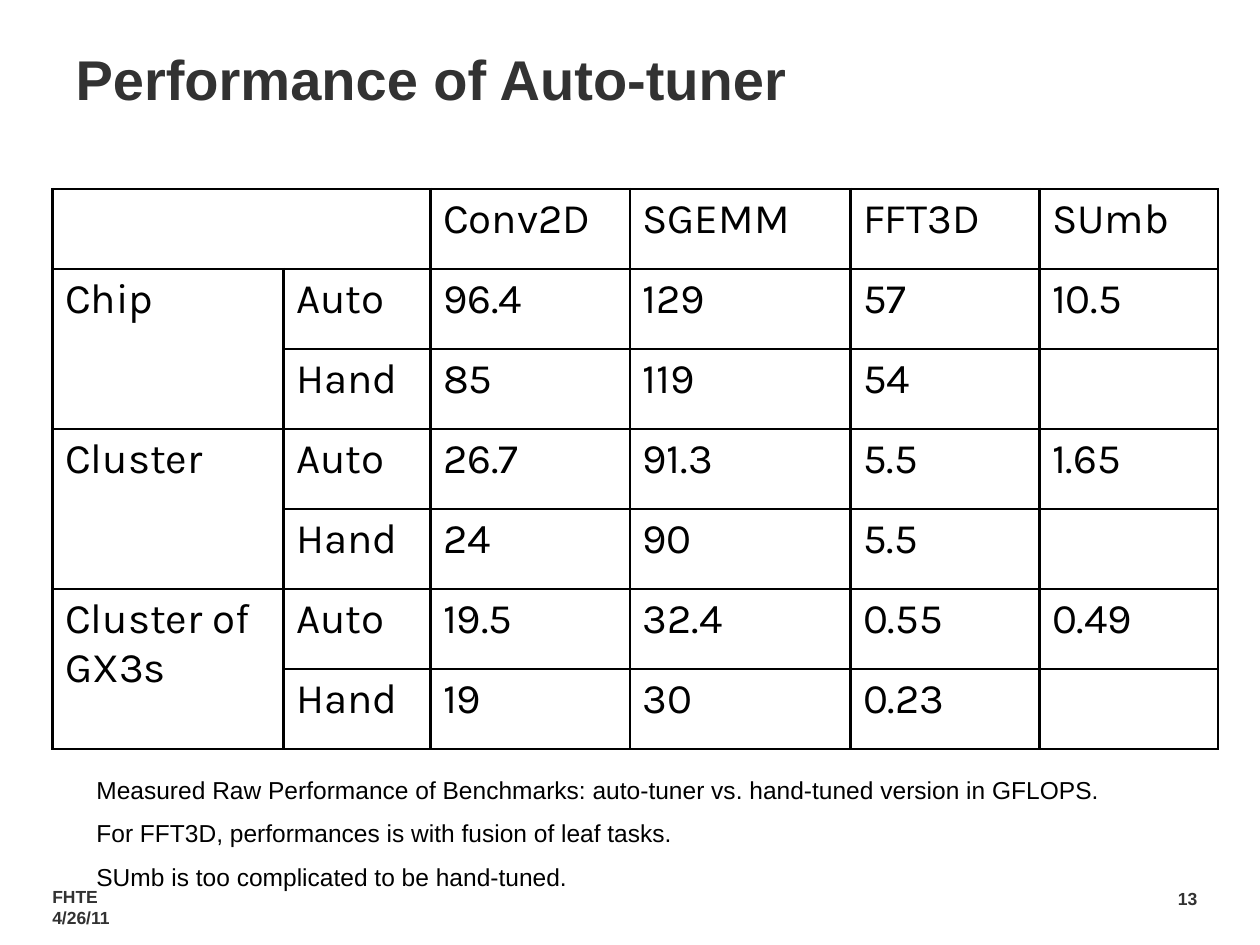
from lxml.etree import SubElement
from pptx import Presentation
from pptx.dml.color import RGBColor
from pptx.enum.text import MSO_ANCHOR as Anchor, MSO_AUTO_SIZE as AutoSize, PP_ALIGN as Align
from pptx.oxml.ns import qn
from pptx.util import Inches, Pt

BLACK = RGBColor(0x00, 0x00, 0x00)
CHARCOAL = RGBColor(0x32, 0x32, 0x32)

COLUMN_WIDTHS = [22, 14, 19, 21, 18, 17]
ROW_HEIGHT = 7.62
HEADINGS = ["Conv2D", "SGEMM", "FFT3D", "SUmb"]
RESULTS = {
    "Chip": (["96.4", "129", "57", "10.5"], ["85", "119", "54", ""]),
    "Cluster": (["26.7", "91.3", "5.5", "1.65"], ["24", "90", "5.5", ""]),
    "Cluster of GX3s": (["19.5", "32.4", "0.55", "0.49"], ["19", "30", "0.23", ""]),
}
NOTES = [
    "Measured Raw Performance of Benchmarks: auto-tuner vs. hand-tuned version in GFLOPS.",
    "For FFT3D, performances is with fusion of leaf tasks.",
    "SUmb is too complicated to be hand-tuned.",
]


def grid(units):
    """Length on a grid of 120 columns and 90 rows, twelve to the inch."""
    return Inches(units / 12)


class SlideBuilder:
    text_font = "Arial"
    table_font = "Karla"
    border_width = Pt(1.5)

    def __init__(self, presentation):
        self.slide = presentation.slides.add_slide(presentation.slide_layouts[5])

    def format_font(self, paragraph, size, color, bold=False, name=text_font):
        font = paragraph.font
        font.name, font.size, font.bold = name, Pt(size), bold
        font.color.rgb = color

    def title(self, text, left, top, width, height):
        shape = self.slide.shapes.title
        shape.left, shape.top = grid(left), grid(top)
        shape.width, shape.height = grid(width), grid(height)
        frame = shape.text_frame
        frame.text = text
        frame.auto_size = AutoSize.NONE
        frame.vertical_anchor = Anchor.MIDDLE
        paragraph = frame.paragraphs[0]
        paragraph.alignment = Align.LEFT
        self.format_font(paragraph, 32, CHARCOAL, bold=True)

    def text(self, lines, left, top, width, height, size, color,
             bold=False, wrap=True, gap=0):
        shape = self.slide.shapes.add_textbox(
            grid(left), grid(top), grid(width), grid(height))
        frame = shape.text_frame
        frame.word_wrap = wrap
        frame.text = "\n".join(lines)
        for index, paragraph in enumerate(frame.paragraphs):
            if index and gap:
                paragraph.space_before = Pt(gap)
            self.format_font(paragraph, size, color, bold)

    def cell(self, cell, text):
        properties = cell._tc.get_or_add_tcPr()
        for side in ("a:lnL", "a:lnR", "a:lnT", "a:lnB"):
            line = SubElement(properties, qn(side), w=str(self.border_width))
            fill = SubElement(line, qn("a:solidFill"))
            SubElement(fill, qn("a:srgbClr"), val=str(BLACK))
        cell.fill.background()
        cell.text = text
        self.format_font(cell.text_frame.paragraphs[0], 24, BLACK, name=self.table_font)

    def table(self, rows, merges, left, top):
        table = self.slide.shapes.add_table(
            len(rows), len(COLUMN_WIDTHS), grid(left), grid(top),
            grid(sum(COLUMN_WIDTHS)), grid(ROW_HEIGHT * len(rows))).table
        table.first_row = table.horz_banding = False
        for column, width in zip(table.columns, COLUMN_WIDTHS):
            column.width = grid(width)
        for row_index, values in enumerate(rows):
            table.rows[row_index].height = grid(ROW_HEIGHT)
            for column_index, value in enumerate(values):
                self.cell(table.cell(row_index, column_index), value)
        for first, last in merges:
            table.cell(*first).merge(table.cell(*last))


def main():
    presentation = Presentation()
    presentation.slide_width, presentation.slide_height = grid(120), grid(90)
    builder = SlideBuilder(presentation)

    # Footer and page number
    builder.text(["FHTE", "4/26/11"], 3.8, 83.75, 8, 5.25, 10, CHARCOAL, bold=True, wrap=False)
    builder.text(["13"], 111, 84, 4.5, 3.25, 10, CHARCOAL, bold=True, wrap=False)

    builder.title("Performance of Auto-tuner", 6, 3.6, 97, 7.7)

    # Benchmark table: two rows for each machine
    rows = [["", "", *HEADINGS]]
    merges = [((0, 0), (0, 1))]
    for machine, (auto, hand) in RESULTS.items():
        merges.append(((len(rows), 0), (len(rows) + 1, 0)))
        rows += [[machine, "Auto", *auto], ["", "Hand", *hand]]
    builder.table(rows, merges, 5, 18)

    # Remarks below the table
    builder.text(NOTES, 8, 73.2, 98, 12.5, 14, BLACK, gap=8)

    presentation.save("out.pptx")


if __name__ == "__main__":
    main()
